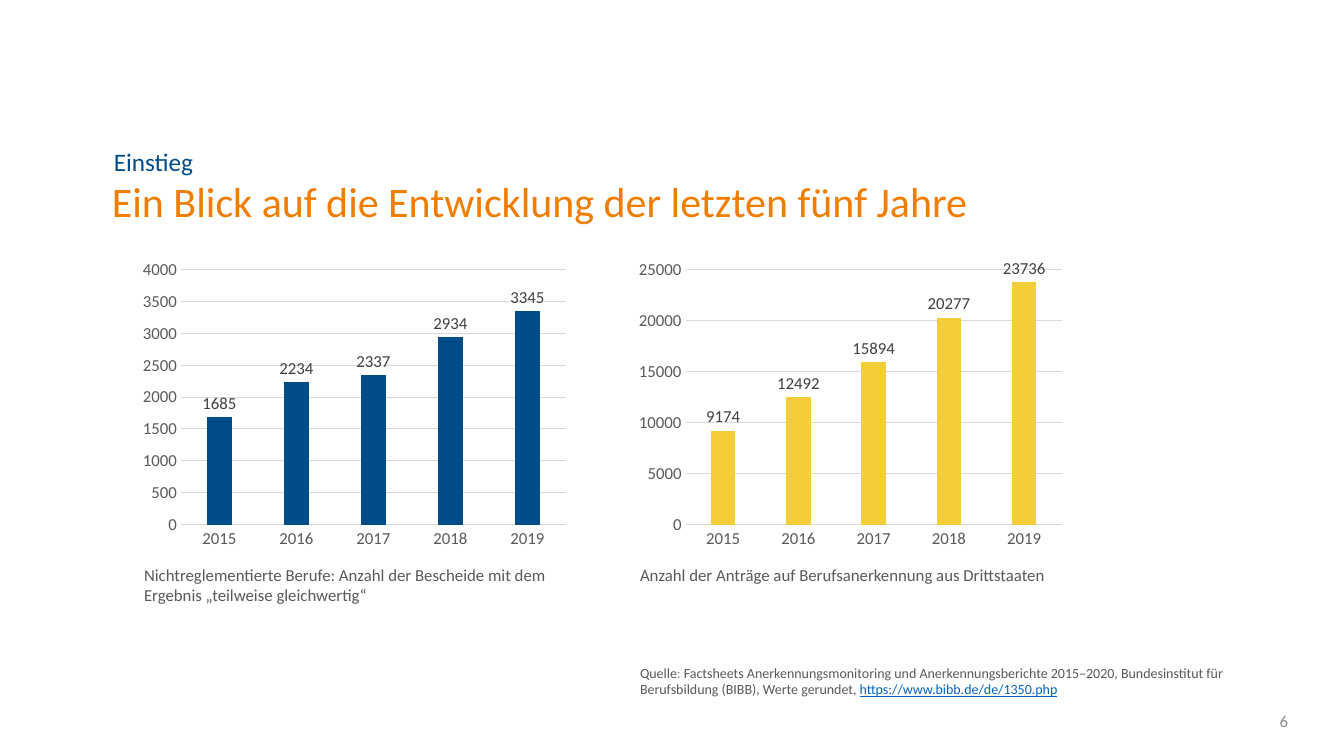
import pptx
import pptx.chart.data
import pptx.dml.color
import pptx.enum.chart
import pptx.enum.text
import pptx.util
from pptx.util import Cm, Pt

FONT = "Calibri"
COLORS = {
    "orange": "F07D00", "blue": "004C89", "yellow": "F4CE39",
    "text": "595959", "colon": "7C7C7C", "label": "404040",
    "grid": "D9D9D9", "link": "0563C1", "number": "8C8C8C",
}

TITLE = "Ein Blick auf die Entwicklung der letzten fünf Jahre"
SECTION = "Einstieg"
PAGE = "6"
YEARS = ["2015", "2016", "2017", "2018", "2019"]
CHARTS = [
    {"left": 3.38, "color": "blue", "top_value": 4000, "step": 500,
     "values": [1685, 2234, 2337, 2934, 3345], "caption_height": 1.28,
     "caption": "Nichtreglementierte Berufe: Anzahl der Bescheide mit dem "
                "Ergebnis „teilweise gleichwertig“"},
    {"left": 15.88, "color": "yellow", "top_value": 25000, "step": 5000,
     "values": [9174, 12492, 15894, 20277, 23736], "caption_height": 0.77,
     "caption": "Anzahl der Anträge auf Berufsanerkennung aus Drittstaaten"},
]
SOURCE = [
    ("Quelle", "text"),
    (": ", "colon"),
    ("Factsheets Anerkennungsmonitoring und Anerkennungsberichte 2015–2020, "
     "Bundesinstitut für Berufsbildung (BIBB), Werte gerundet, ", "text"),
    ("https://www.bibb.de/de/1350.php", "link"),
]
CHART_TOP, CHART_WIDTH, CHART_HEIGHT = 6.4, 11.1, 7.57
CAPTION_TOP = 14.1


def rgb(name):
    return pptx.dml.color.RGBColor.from_string(COLORS[name])


def style_font(font, size, color):
    font.name = FONT
    font.size = Pt(size)
    font.color.rgb = rgb(color)


def style_line(line, color):
    line.color.rgb = rgb(color)
    line.width = Pt(0.75)


def add_text(slide, box, runs, size):
    """Add a text box at box (cm) from (text, color) runs; return its frame."""
    tf = slide.shapes.add_textbox(*map(Cm, box)).text_frame
    tf.word_wrap = True
    for text, color in runs:
        r = tf.paragraphs[0].add_run()
        r.text = text
        style_font(r.font, size, color)
        if color == "link":
            r.font.underline = True
    return tf


def add_column_chart(slide, item):
    data = pptx.chart.data.CategoryChartData()
    data.categories = YEARS
    data.add_series("Series 1", item["values"])
    chart = slide.shapes.add_chart(
        pptx.enum.chart.XL_CHART_TYPE.COLUMN_CLUSTERED,
        Cm(item["left"]), Cm(CHART_TOP), Cm(CHART_WIDTH), Cm(CHART_HEIGHT),
        data).chart
    chart.has_legend = False
    chart.has_title = False
    chart.font.name = FONT
    chart.font.size = Pt(10)

    for axis in (chart.category_axis, chart.value_axis):
        axis.major_tick_mark = pptx.enum.chart.XL_TICK_MARK.NONE
        axis.minor_tick_mark = pptx.enum.chart.XL_TICK_MARK.NONE
        style_font(axis.tick_labels.font, 12, "text")
    style_line(chart.category_axis.format.line, "grid")
    values = chart.value_axis
    values.minimum_scale = 0
    values.maximum_scale = item["top_value"]
    values.major_unit = item["step"]
    values.format.line.fill.background()
    style_line(values.major_gridlines.format.line, "grid")

    plot = chart.plots[0]
    plot.vary_by_categories = False
    plot.gap_width = 219
    plot.overlap = -27
    series = plot.series[0]
    series.format.fill.solid()
    series.format.fill.fore_color.rgb = rgb(item["color"])
    style_line(series.format.line, item["color"])
    labels = series.data_labels
    labels.show_value = True
    labels.position = pptx.enum.chart.XL_LABEL_POSITION.OUTSIDE_END
    style_font(labels.font, 12, "label")


def main():
    prs = pptx.Presentation()
    prs.slide_width, prs.slide_height = Cm(33.87), Cm(19.05)
    slide = prs.slides.add_slide(prs.slide_layouts[6])

    tf = add_text(slide, (30.81, 17.65, 1.9, 1.02), [(PAGE, "number")], 12)
    tf.vertical_anchor = pptx.enum.text.MSO_ANCHOR.MIDDLE
    tf.paragraphs[0].alignment = pptx.enum.text.PP_ALIGN.RIGHT

    for box, text, size, color in (
            ((2.57, 4.45, 30.1, 1.42), TITLE, 30, "orange"),
            ((2.62, 3.66, 30.1, 0.79), SECTION, 18, "blue")):
        tf = add_text(slide, box, [(text, color)], size)
        tf.paragraphs[0].line_spacing = 0.9

    for item in CHARTS:
        add_column_chart(slide, item)
        box = (item["left"], CAPTION_TOP, CHART_WIDTH, item["caption_height"])
        add_text(slide, box, [(item["caption"], "text")], 12)

    add_text(slide, (15.88, 16.61, 15.21, 1.12), SOURCE, 10)
    prs.save("out.pptx")


if __name__ == "__main__":
    main()
